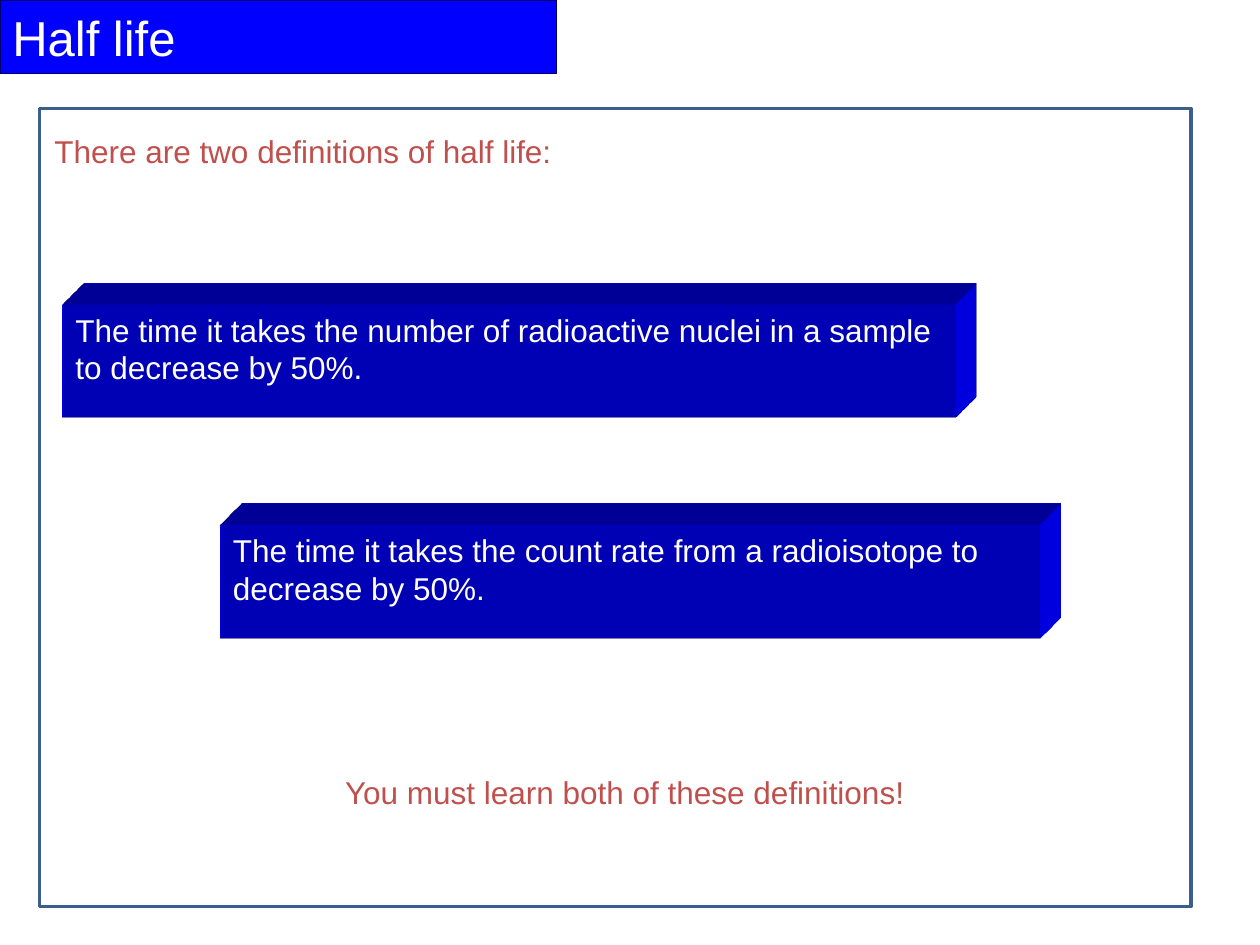
from dataclasses import dataclass

from lxml.etree import SubElement
from pptx import Presentation
from pptx.dml.color import RGBColor as Rgb
from pptx.enum.shapes import MSO_SHAPE as Preset
from pptx.enum.text import MSO_ANCHOR as Anchor, PP_ALIGN as Align
from pptx.oxml import parse_xml
from pptx.oxml.ns import nsdecls, qn
from pptx.util import Inches, Pt

COLUMNS, ROWS = 120, 90


@dataclass(frozen=True)
class Theme:
    """Colours and type sizes of the slide."""
    font: str = "Arial"
    title_size: int = 28
    body_size: int = 18
    paper: str = "FFFFFF"
    frame: str = "3A5F8C"
    block: str = "0000FF"
    title_edge: str = "000066"
    accent: str = "C0504D"


THEME = Theme()


def grid_box(deck, left, top, width, height):
    """Turn columns and rows into slide lengths."""
    column, row = deck.slide_width / COLUMNS, deck.slide_height / ROWS
    return int(left * column), int(top * row), int(width * column), int(height * row)


def write(region, text, size, color, align=Align.LEFT, anchor=Anchor.TOP):
    """Put one run of text into a region."""
    frame = region.text_frame
    frame.word_wrap = True
    frame.vertical_anchor = anchor
    paragraph = frame.paragraphs[0]
    paragraph.alignment = align
    run = paragraph.add_run()
    run.text = text
    run.font.name, run.font.size = THEME.font, Pt(size)
    run.font.color.rgb = Rgb.from_string(color)


def panel(slide, box, fill, edge=None, weight=0):
    """Draw a flat rectangle."""
    rectangle = slide.shapes.add_shape(Preset.RECTANGLE, *box)
    rectangle.shadow.inherit = False
    rectangle.fill.solid()
    rectangle.fill.fore_color.rgb = Rgb.from_string(fill)
    if edge:
        rectangle.line.color.rgb = Rgb.from_string(edge)
        rectangle.line.width = Pt(weight)
    else:
        rectangle.line.fill.background()
    return rectangle


def content_frame(slide, box):
    """Draw the outlined, slightly transparent content area."""
    area = panel(slide, box, THEME.paper, THEME.frame, 2)
    color = area.fill._xPr.find(qn("a:solidFill"))[0]
    SubElement(color, qn("a:alpha"), val="90000")


def title_bar(slide, box, text):
    """Draw the title bar."""
    bar = panel(slide, box, THEME.block, THEME.title_edge, 0.75)
    write(bar, text, THEME.title_size, THEME.paper, anchor=Anchor.MIDDLE)


def definition_block(slide, box, text):
    """Draw a definition on a block extruded to the top right."""
    block = panel(slide, box, THEME.block)
    properties = block._element.spPr
    properties.append(parse_xml(
        f'<a:scene3d {nsdecls("a")}><a:camera prst="legacyObliqueTopRight"/>'
        '<a:lightRig rig="legacyFlat3" dir="b"/></a:scene3d>'))
    properties.append(parse_xml(
        f'<a:sp3d {nsdecls("a")} extrusionH="430200" prstMaterial="legacyMatte">'
        '<a:bevelT w="13500" h="13500" prst="angle"/>'
        '<a:bevelB w="13500" h="13500" prst="angle"/>'
        f'<a:extrusionClr><a:srgbClr val="{THEME.block}"/></a:extrusionClr></a:sp3d>'))
    write(block, text, THEME.body_size, THEME.paper)


def remark(slide, box, text, align=Align.LEFT):
    """Place a line of accent text."""
    write(slide.shapes.add_textbox(*box), text, THEME.body_size, THEME.accent, align)


def main():
    """Build and save the half life slide."""
    deck = Presentation()
    deck.slide_width, deck.slide_height = Inches(10), Inches(7.5)
    slide = deck.slides.add_slide(deck.slide_layouts[6])
    content_frame(slide, grid_box(deck, 3.75, 10.33, 109.67, 76))
    title_bar(slide, grid_box(deck, 0, 0, 53, 7), "Half life")
    definition_block(slide, grid_box(deck, 6, 29, 85, 10.8),
                     "The time it takes the number of radioactive nuclei "
                     "in a sample to decrease by 50%.")
    definition_block(slide, grid_box(deck, 21, 50, 78, 10.8),
                     "The time it takes the count rate from a radioisotope "
                     "to decrease by 50%.")
    remark(slide, grid_box(deck, 4, 12, 85, 6), "There are two definitions of half life:")
    remark(slide, grid_box(deck, 17, 73, 85, 6),
           "You must learn both of these definitions!", Align.CENTER)
    deck.save("out.pptx")


if __name__ == "__main__":
    main()
